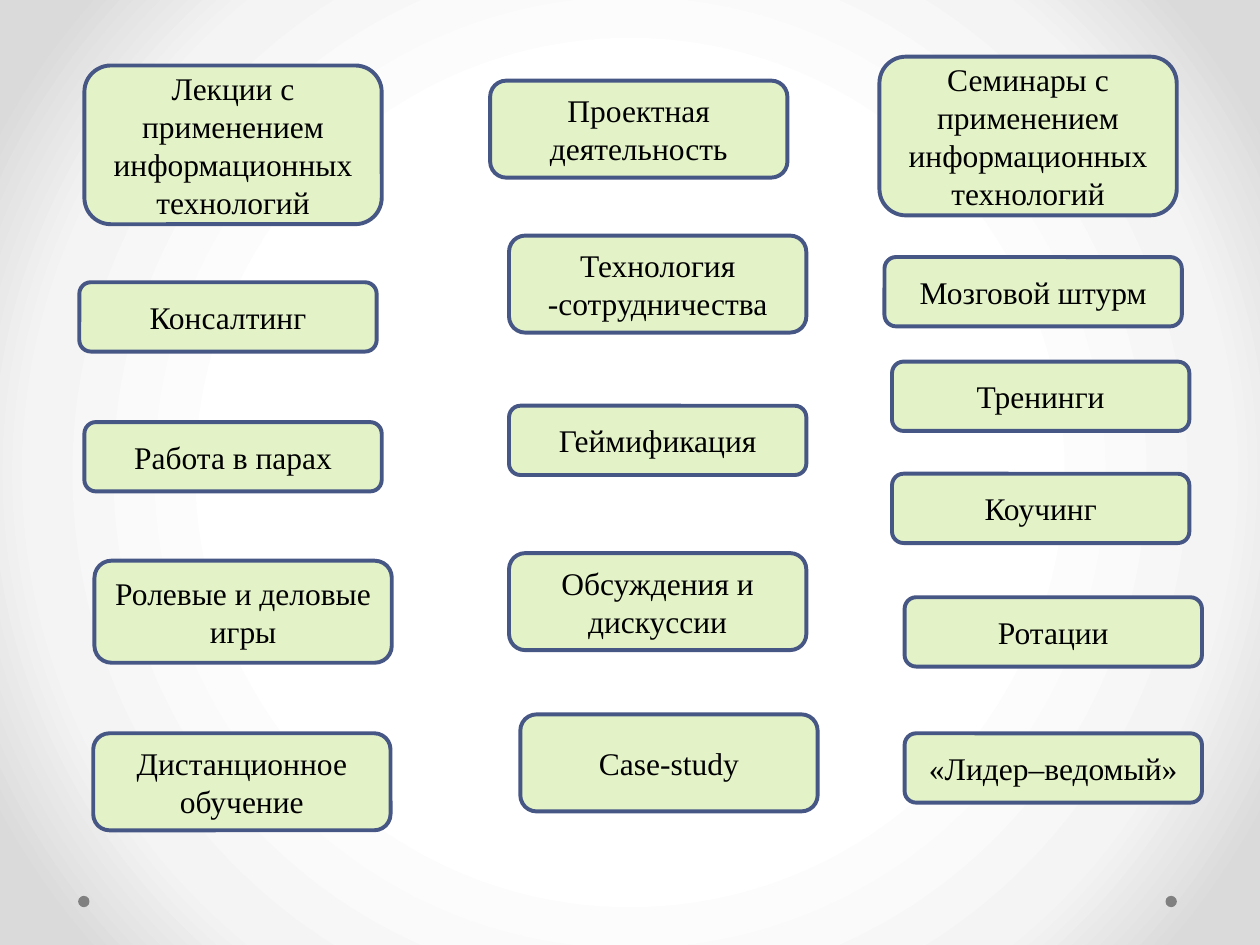
from dataclasses import dataclass

from lxml.etree import SubElement
from pptx import Presentation
from pptx.dml.color import RGBColor
from pptx.enum.shapes import MSO_SHAPE
from pptx.enum.text import MSO_ANCHOR, PP_ALIGN
from pptx.oxml.ns import qn
from pptx.util import Inches, Pt


@dataclass(frozen=True)
class Theme:
    card: str = "E3F2C7"
    border: str = "475785"
    text: str = "000000"
    dot: str = "808080"
    glow: tuple = ((50, "FFFFFF"), (76, "F4F4F4"), (92, "DADADA"))
    font: str = "Times New Roman"
    size: int = 18
    border_width: float = 2.25


THEME = Theme()
CARD_WIDTH = 2.36
ONE_LINE, TWO_LINES, ROLE_PLAY, FOUR_LINES = 0.55, 0.77, 0.81, 1.26
DOT_SIZE, DOT_TOP, DOT_LEFTS = 0.09, 7.11, (0.62, 9.25)

METHOD_COLUMNS = (
    (
        (0.67, 0.52, FOUR_LINES, "Лекции с применением информационных технологий"),
        (0.63, 2.24, ONE_LINE, "Консалтинг"),
        (0.67, 3.35, ONE_LINE, "Работа в парах"),
        (0.75, 4.45, ROLE_PLAY, "Ролевые и деловые игры"),
        (0.74, 5.82, TWO_LINES, "Дистанционное обучение"),
    ),
    (
        (3.89, 0.64, TWO_LINES, "Проектная деятельность"),
        (4.04, 1.87, TWO_LINES, "Технология -сотрудничества"),
        (4.04, 3.22, ONE_LINE, "Геймификация"),
        (4.04, 4.39, TWO_LINES, "Обсуждения и дискуссии"),
        (4.13, 5.67, TWO_LINES, "Case-study"),
    ),
    (
        (6.98, 0.45, FOUR_LINES, "Семинары с применением информационных технологий"),
        (7.02, 2.04, ONE_LINE, "Мозговой штурм"),
        (7.08, 2.87, ONE_LINE, "Тренинги"),
        (7.08, 3.76, ONE_LINE, "Коучинг"),
        (7.18, 4.74, ONE_LINE, "Ротации"),
        (7.18, 5.82, ONE_LINE, "«Лидер–ведомый»"),
    ),
)


def paint_background(slide):
    """Fill the slide with a circular gradient spreading from its centre."""
    slide.background.fill.gradient()
    gradient = next(slide.element.iter(qn("a:gradFill")))
    for child in list(gradient):
        gradient.remove(child)
    stops = SubElement(gradient, qn("a:gsLst"))
    for percent, color in THEME.glow:
        stop = SubElement(stops, qn("a:gs"), pos=str(percent * 1000))
        SubElement(stop, qn("a:srgbClr"), val=color)
    circle = SubElement(gradient, qn("a:path"), {"path": "circle"})
    center = dict.fromkeys("ltrb", "50000")
    SubElement(circle, qn("a:fillToRect"), center)


def add_filled(slide, preset, left, top, width, height, color):
    """Add a flat preset shape with a solid fill."""
    shape = slide.shapes.add_shape(
        preset, Inches(left), Inches(top), Inches(width), Inches(height)
    )
    shape.shadow.inherit = False
    shape.fill.solid()
    shape.fill.fore_color.rgb = RGBColor.from_string(color)
    return shape


def add_dot(slide, left):
    """Add one decorative dot at the foot of the slide."""
    dot = add_filled(
        slide, MSO_SHAPE.OVAL, left, DOT_TOP, DOT_SIZE, DOT_SIZE, THEME.dot
    )
    dot.line.fill.background()


def add_method(slide, left, top, height, method):
    """Add a rounded card naming one teaching method."""
    card = add_filled(
        slide, MSO_SHAPE.ROUNDED_RECTANGLE, left, top, CARD_WIDTH, height, THEME.card
    )
    card.line.color.rgb = RGBColor.from_string(THEME.border)
    card.line.width = Pt(THEME.border_width)
    frame = card.text_frame
    frame.text = method
    frame.word_wrap = True
    frame.vertical_anchor = MSO_ANCHOR.MIDDLE
    label = frame.paragraphs[0]
    label.alignment = PP_ALIGN.CENTER
    font = label.runs[0].font
    font.name = THEME.font
    font.size = Pt(THEME.size)
    font.color.rgb = RGBColor.from_string(THEME.text)


def main():
    """Build the slide of teaching methods and save it."""
    deck = Presentation()
    deck.slide_width, deck.slide_height = Inches(10), Inches(7.5)
    slide = deck.slides.add_slide(deck.slide_layouts[6])
    paint_background(slide)
    for left in DOT_LEFTS:
        add_dot(slide, left)
    for column in METHOD_COLUMNS:
        for method in column:
            add_method(slide, *method)
    deck.save("out.pptx")


if __name__ == "__main__":
    main()
